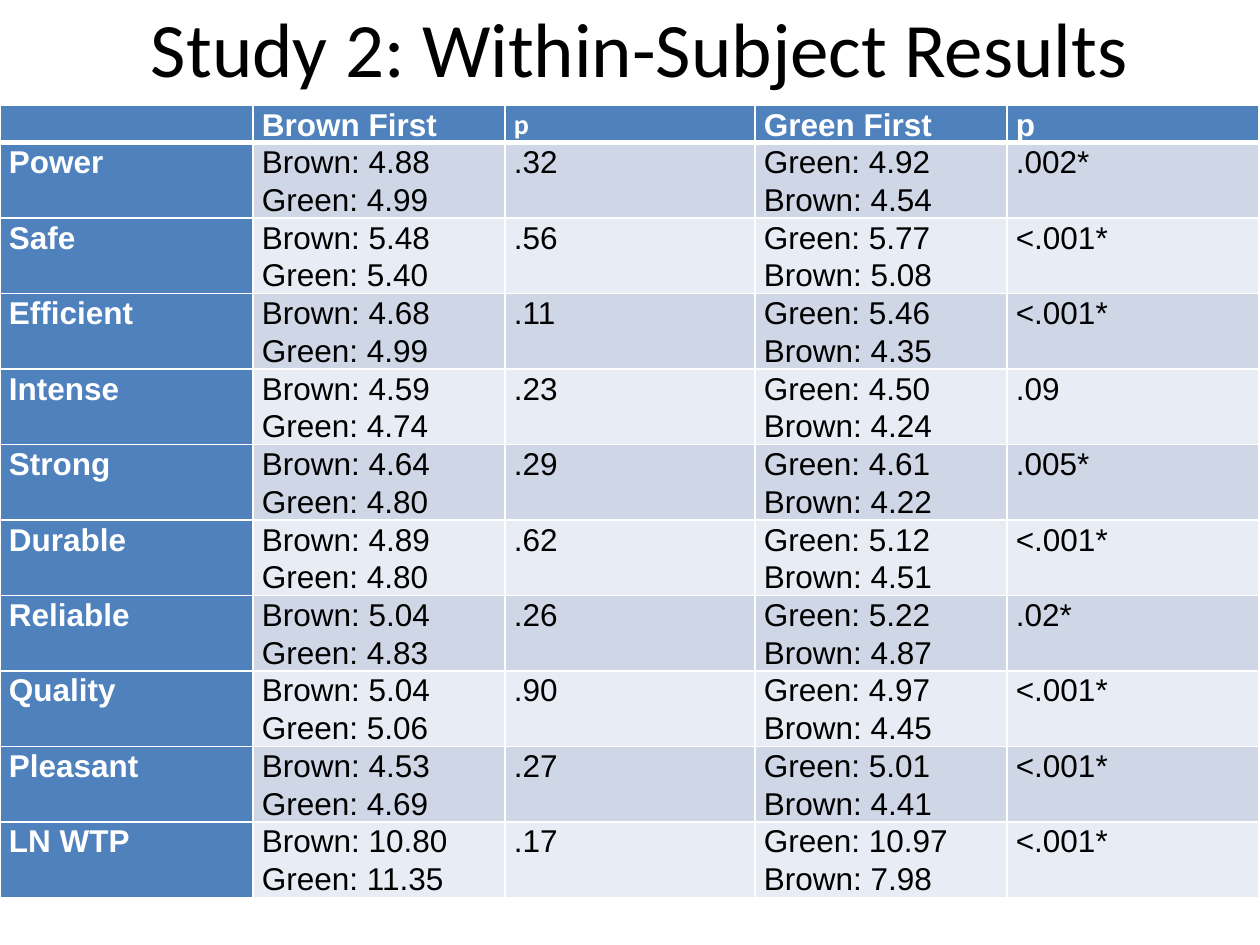
import dataclasses

import lxml.etree
import pptx
import pptx.dml.color
import pptx.enum.text
import pptx.oxml.ns
import pptx.util

PX = 914400 // 126  # EMU in one px


@dataclasses.dataclass(frozen=True)
class Theme:
    head: str = "4F81BD"
    bands: tuple = ("CFD7E7", "E8ECF4")
    white: str = "FFFFFF"
    black: str = "000000"
    title_font: str = "Calibri"
    font: str = "Arial"
    title_size: int = 44
    size: int = 18
    small: int = 16
    thin: int = 1
    thick: int = 3


THEME = Theme()
ALIGN = pptx.enum.text.PP_ALIGN
ANCHOR = pptx.enum.text.MSO_ANCHOR

COLS = (253, 252, 250, 252, 252)
HEAD_H, ROW_H = 34, 69
HEADS = ("", "Brown First", "p", "Green First", "p")
# Measure, brown-first means and p, green-first means and p
RESULTS = (
    ("Power", "4.88", "4.99", ".32", "4.92", "4.54", ".002*"),
    ("Safe", "5.48", "5.40", ".56", "5.77", "5.08", "<.001*"),
    ("Efficient", "4.68", "4.99", ".11", "5.46", "4.35", "<.001*"),
    ("Intense", "4.59", "4.74", ".23", "4.50", "4.24", ".09"),
    ("Strong", "4.64", "4.80", ".29", "4.61", "4.22", ".005*"),
    ("Durable", "4.89", "4.80", ".62", "5.12", "4.51", "<.001*"),
    ("Reliable", "5.04", "4.83", ".26", "5.22", "4.87", ".02*"),
    ("Quality", "5.04", "5.06", ".90", "4.97", "4.45", "<.001*"),
    ("Pleasant", "4.53", "4.69", ".27", "5.01", "4.41", "<.001*"),
    ("LN WTP", "10.80", "11.35", ".17", "10.97", "7.98", "<.001*"),
)


def px(n):
    return pptx.util.Emu(n * PX)


def rgb(color):
    return pptx.dml.color.RGBColor.from_string(color)


def write(frame, text, font=THEME.font, size=THEME.size, color=THEME.black,
          bold=False, align=None, lead=None):
    """Write one paragraph per line of text."""
    for i, line in enumerate(text.split("\n")):
        para = frame.add_paragraph() if i else frame.paragraphs[0]
        para.alignment = align
        para.line_spacing = lead
        if not line:
            # An empty line still sets the least row height
            end = lxml.etree.SubElement(
                para._p, pptx.oxml.ns.qn("a:endParaRPr"))
            end.set("sz", str(size * 100))
            continue
        run = para.add_run()
        run.text = line
        run.font.name = font
        run.font.size = pptx.util.Pt(size)
        run.font.bold = bold
        run.font.color.rgb = rgb(color)


def add_edge(cell, side, width):
    qn = pptx.oxml.ns.qn
    line = lxml.etree.SubElement(
        cell._tc.get_or_add_tcPr(), qn("a:ln" + side))
    line.set("w", str(pptx.util.Pt(width)))
    fill = lxml.etree.SubElement(line, qn("a:solidFill"))
    lxml.etree.SubElement(fill, qn("a:srgbClr")).set("val", THEME.white)


def fill_cell(cell, text, fill, top, bottom, **form):
    cell.margin_left = cell.margin_right = px(9)
    cell.margin_top = cell.margin_bottom = 0
    for side, width in (("L", THEME.thin), ("R", THEME.thin),
                        ("T", top), ("B", bottom)):
        add_edge(cell, side, width)
    cell.fill.solid()
    cell.fill.fore_color.rgb = rgb(fill)
    write(cell.text_frame, text, lead=1.07, **form)


def add_title(slide, text):
    title = slide.shapes.title
    title.left, title.top = px(73), px(-32)
    title.width, title.height = px(1134), px(158)
    title.text_frame.vertical_anchor = ANCHOR.MIDDLE
    write(title.text_frame, text, font=THEME.title_font,
          size=THEME.title_size, align=ALIGN.CENTER)


def add_results(slide):
    count = len(RESULTS)
    table = slide.shapes.add_table(
        count + 1, len(COLS), 0, px(105),
        px(sum(COLS)), px(HEAD_H + ROW_H * count)).table
    for col, width in zip(table.columns, COLS):
        col.width = px(width)

    # Header row
    table.rows[0].height = px(HEAD_H)
    for c, text in enumerate(HEADS):
        form = {"color": THEME.white, "bold": True}
        if c == 0:
            form.update(size=THEME.small)
        elif c == 2:
            form.update(font=THEME.title_font, size=THEME.small)
        fill_cell(table.cell(0, c), text, THEME.head,
                  THEME.thin, THEME.thick, **form)

    # Banded rows with a strong first column
    for r, (name, b1, g1, p1, g2, b2, p2) in enumerate(RESULTS, 1):
        table.rows[r].height = px(ROW_H)
        top = THEME.thick if r == 1 else THEME.thin
        fill_cell(table.cell(r, 0), name, THEME.head, top, THEME.thin,
                  color=THEME.white, bold=True)
        texts = (f"Brown: {b1}\nGreen: {g1}", p1,
                 f"Green: {g2}\nBrown: {b2}", p2)
        for c, text in enumerate(texts, 1):
            fill_cell(table.cell(r, c), text, THEME.bands[(r - 1) % 2],
                      top, THEME.thin)


def main():
    deck = pptx.Presentation()
    deck.slide_width, deck.slide_height = px(1260), px(945)
    slide = deck.slides.add_slide(deck.slide_layouts[5])
    add_title(slide, "Study 2: Within-Subject Results")
    add_results(slide)
    deck.save("out.pptx")


if __name__ == "__main__":
    main()
